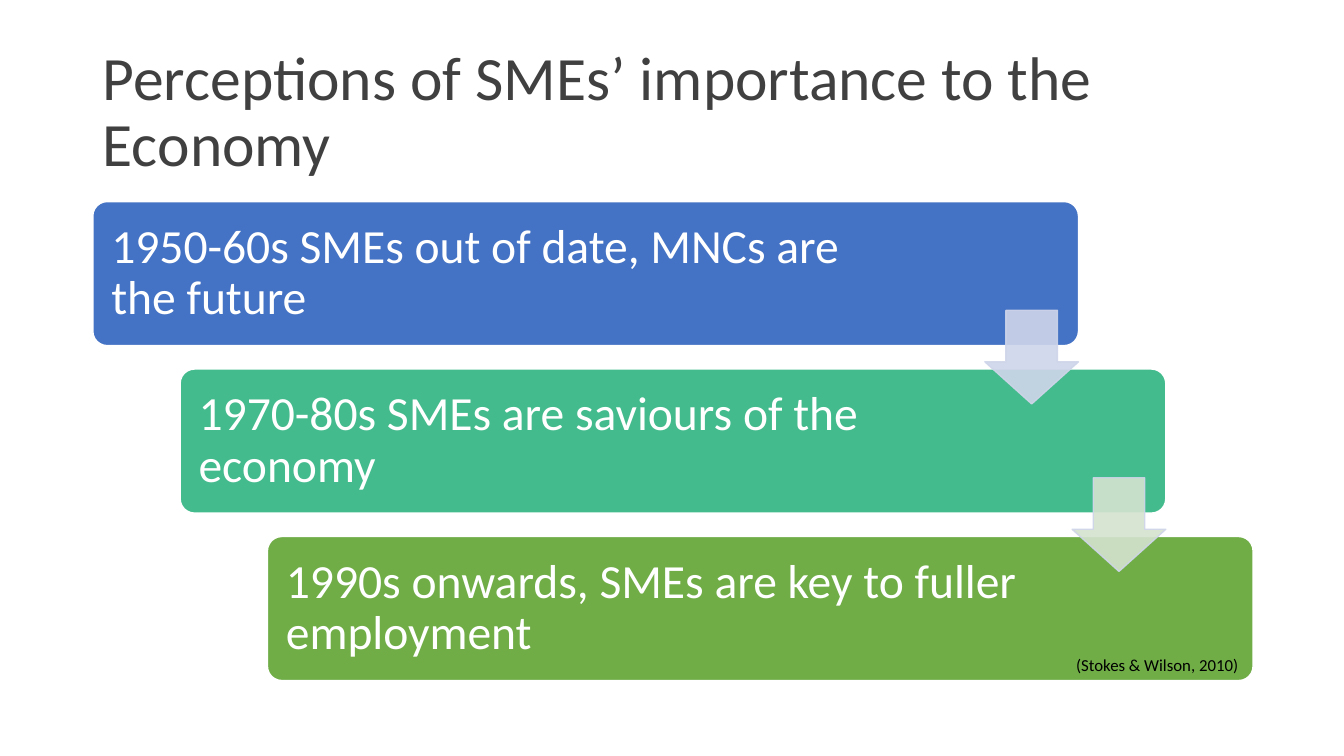
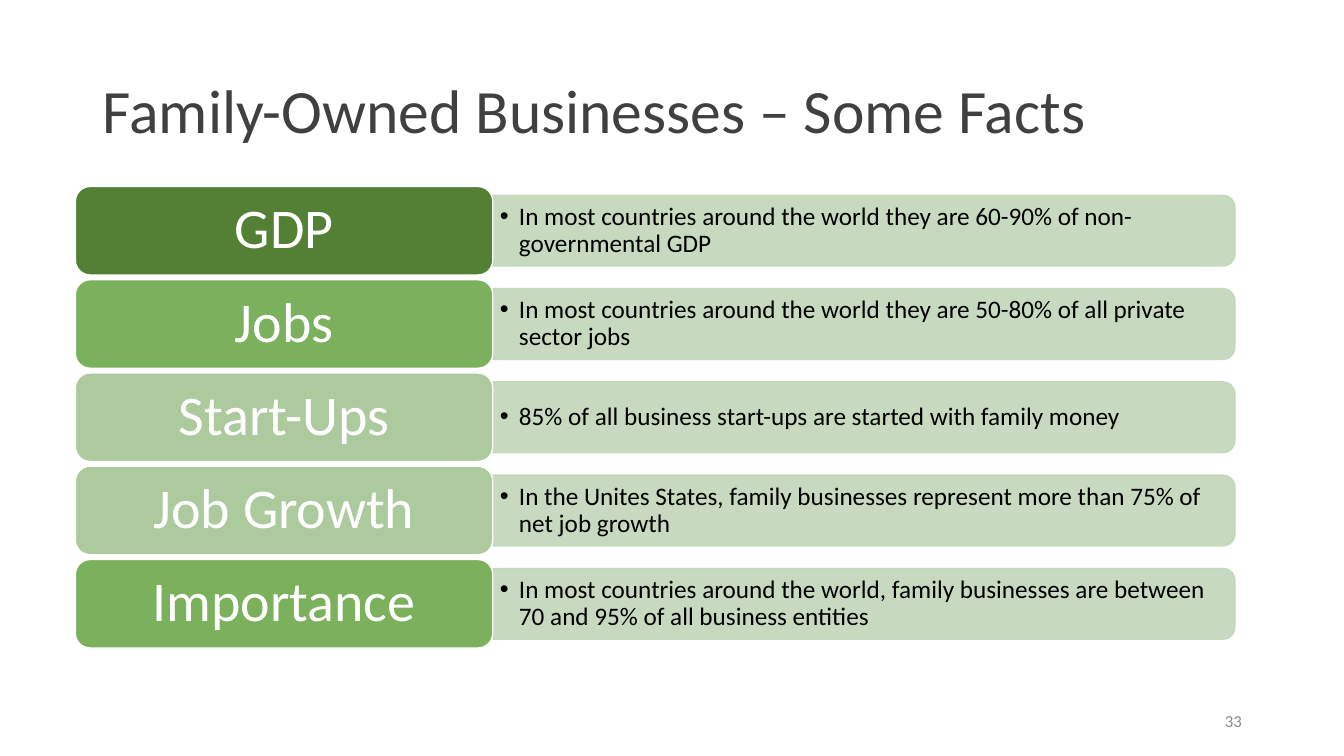
from dataclasses import dataclass

from lxml.etree import SubElement
from pptx import Presentation
from pptx.dml.color import RGBColor
from pptx.enum.shapes import MSO_SHAPE
from pptx.enum.text import MSO_ANCHOR, PP_ALIGN
from pptx.oxml.ns import qn
from pptx.util import Cm, Pt


@dataclass(frozen=True)
class Theme:
    font: str = "Calibri"
    white: str = "FFFFFF"
    black: str = "000000"
    title: str = "404041"
    number: str = "8C8C8C"
    blue: str = "4472C4"
    teal: str = "43BB8D"
    green: str = "70AD47"
    arrow_line: str = "CFD5EA"
    arrow_green: str = "D5E3CF"
    dark_green: str = "538035"
    mid_green: str = "7BB15D"
    pale_green: str = "ACCA9E"
    bar: str = "C2D7B9"
    title_pt: int = 44
    tile_pt: int = 40
    step_pt: int = 34
    fact_pt: int = 18
    small_pt: int = 12


class Deck:
    def __init__(self, theme):
        self.theme = theme
        self.prs = Presentation()
        self.prs.slide_width, self.prs.slide_height = Cm(33.87), Cm(19.05)
        self.s = None

    def new_slide(self, title):
        self.s = self.prs.slides.add_slide(self.prs.slide_layouts[6])
        self.text(title, 2.34, 1.02, 29.21, 3.68, self.theme.title_pt,
                  self.theme.title, spacing=0.9)

    def fill_text(self, tf, text, size, color, align=PP_ALIGN.LEFT,
                  anchor=MSO_ANCHOR.MIDDLE, insets=(0.25, 0.13, 0.25, 0.13),
                  spacing=None, bullet=False, wrap=True):
        """Fill a text frame with one styled paragraph; insets run left, top, right, bottom."""
        tf.word_wrap = wrap
        tf.vertical_anchor = anchor
        (tf.margin_left, tf.margin_top,
         tf.margin_right, tf.margin_bottom) = map(Cm, insets)
        p = tf.paragraphs[0]
        p.alignment = align
        if spacing:
            p.line_spacing = spacing
        if bullet:
            pPr = p._p.get_or_add_pPr()
            pPr.set("marL", str(Cm(0.48)))
            pPr.set("indent", str(-Cm(0.48)))
            SubElement(pPr, qn("a:buFont")).set("typeface", "Arial")
            SubElement(pPr, qn("a:buChar")).set("char", "•")
        r = p.add_run()
        r.text = text
        r.font.name = self.theme.font
        r.font.size = Pt(size)
        r.font.color.rgb = RGBColor.from_string(color)

    def text(self, text, x, y, w, h, size, color, **style):
        sp = self.s.shapes.add_textbox(Cm(x), Cm(y), Cm(w), Cm(h))
        self.fill_text(sp.text_frame, text, size, color, **style)

    def shape(self, kind, x, y, w, h, fill, line, adjust=(), opacity=100):
        sp = self.s.shapes.add_shape(kind, Cm(x), Cm(y), Cm(w), Cm(h))
        sp.shadow.inherit = False
        sp.fill.solid()
        sp.fill.fore_color.rgb = RGBColor.from_string(fill)
        sp.line.color.rgb = RGBColor.from_string(line)
        sp.line.width = Pt(1)
        for i, value in enumerate(adjust):
            sp.adjustments[i] = value
        if opacity < 100:
            for clr in sp._element.spPr.iter(qn("a:srgbClr")):
                SubElement(clr, qn("a:alpha")).set("val", str(opacity * 1000))
        return sp

    def step(self, text, x, y, w, h, fill):
        sp = self.shape(MSO_SHAPE.ROUNDED_RECTANGLE, x, y, w, h, fill,
                        self.theme.white, adjust=(0.1,))
        self.fill_text(sp.text_frame, text, self.theme.step_pt, self.theme.white,
                       insets=(0.36, 0.36, 4.9, 0.36), spacing=0.9)

    def down_arrow(self, x, y, size, fill):
        self.shape(MSO_SHAPE.DOWN_ARROW, x, y, size, size, fill,
                   self.theme.arrow_line, adjust=(0.55, 0.45), opacity=90)

    def tile(self, text, x, y, w, h, fill):
        sp = self.shape(MSO_SHAPE.ROUNDED_RECTANGLE, x, y, w, h, fill, self.theme.white)
        self.fill_text(sp.text_frame, text, self.theme.tile_pt, self.theme.white,
                       align=PP_ALIGN.CENTER, insets=(0.43, 0.2, 0.43, 0.2), spacing=0.9)

    def fact_bar(self, text, x, y, w, h):
        """Bar rounded on its right end: a top-rounded shape turned by 90 degrees."""
        sp = self.shape(MSO_SHAPE.ROUND_2_SAME_RECTANGLE, x + (w - h) / 2,
                        y + (h - w) / 2, h, w, self.theme.bar, self.theme.bar,
                        opacity=90)
        sp.rotation = 90
        self.text(text, x, y, w - 0.08, h, self.theme.fact_pt, self.theme.black,
                  insets=(0.18, 0.1, 0.18, 0.1), spacing=0.9, bullet=True)

    def citation(self, text):
        self.text(text, 26.87, 16.38, 4.65, 0.76, self.theme.small_pt,
                  self.theme.black, anchor=MSO_ANCHOR.TOP, wrap=False)

    def page_number(self, number):
        self.text(str(number), 23.93, 17.65, 7.62, 1.02, self.theme.small_pt,
                  self.theme.number, align=PP_ALIGN.RIGHT)


def perceptions_slide(deck):
    t = deck.theme
    deck.new_slide("Perceptions of SMEs’ importance to the Economy")
    left, top, width, height = 2.34, 5.08, 24.84, 3.63
    step_x, step_y, arrow = 2.2, 4.22, 2.36
    steps = [
        ("1950-60s SMEs out of date, MNCs are the future", t.blue),
        ("1970-80s SMEs are saviours of the economy", t.teal),
        ("1990s onwards, SMEs are key to fuller employment", t.green),
    ]
    for i, (text, fill) in enumerate(steps):
        deck.step(text, left + i * step_x, top + i * step_y, width, height, fill)
    for i, fill in enumerate([t.arrow_line, t.arrow_green]):
        deck.down_arrow(left + i * step_x + width - arrow,
                        top + i * step_y + 2.74, arrow, fill)
    deck.citation("(Stokes & Wilson, 2010)")


def family_facts_slide(deck):
    t = deck.theme
    deck.new_slide("Family-Owned Businesses – Some Facts")
    left, top, tile_w, tile_h = 1.9, 4.7, 10.52, 2.23
    bar_w, bar_h, pitch = 18.7, 1.78, 2.35
    facts = [
        ("GDP", t.dark_green,
         "In most countries around the world they are 60-90% of non-governmental GDP"),
        ("Jobs", t.mid_green,
         "In most countries around the world they are 50-80% of all private sector jobs"),
        ("Start-Ups", t.pale_green,
         "85% of all business start-ups are started with family money"),
        ("Job Growth", t.pale_green,
         "In the Unites States, family businesses represent more than 75% of net job growth"),
        ("Importance", t.mid_green,
         "In most countries around the world, family businesses are between "
         "70 and 95% of all business entities"),
    ]
    for i, (label, fill, fact) in enumerate(facts):
        y = top + i * pitch
        deck.fact_bar(fact, left + tile_w, y + (tile_h - bar_h) / 2, bar_w, bar_h)
        deck.tile(label, left, y, tile_w, tile_h, fill)
    deck.page_number(33)


def main():
    deck = Deck(Theme())
    perceptions_slide(deck)
    family_facts_slide(deck)
    deck.prs.save("out.pptx")


if __name__ == "__main__":
    main()
